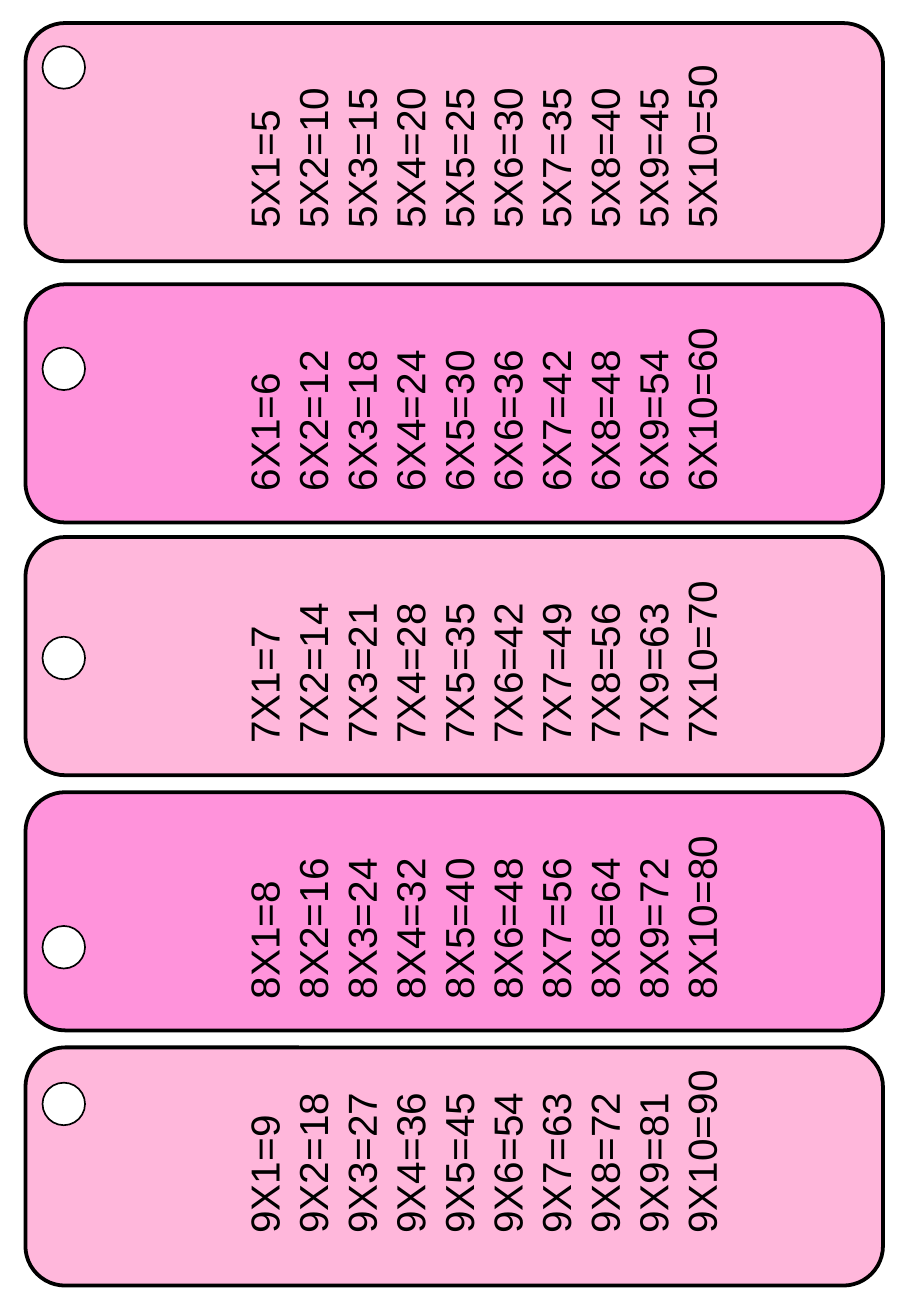
from lxml import etree
from pptx import Presentation
from pptx import util as u
from pptx.dml.color import RGBColor
from pptx.enum import shapes, text
from pptx.oxml.ns import qn

PX = u.Inches(1) // 100
BLACK = RGBColor(0x00, 0x00, 0x00)
WHITE = RGBColor(0xFF, 0xFF, 0xFF)
LIGHT_PINK = RGBColor(0xFF, 0x99, 0xCC)
DEEP_PINK = RGBColor(0xFF, 0x66, 0xCC)

CARD_LEFT, CARD_WIDTH, CARD_HEIGHT = 21, 706, 196
HOLE_LEFT, HOLE_SIZE = 35, 35
TABLE_LEFT, TABLE_WIDTH, TABLE_HEIGHT = 317, 164, 414

# multiplier, card top, hole top, top of the times table before its turn
CARDS = [
    (5, 19, 38, -91),
    (6, 234, 286, 125),
    (7, 442, 524, 333),
    (8, 652, 762, 543),
    (9, 862, 891, 736),
]

FRAME_FORMAT = {
    "word_wrap": True,
    "auto_size": text.MSO_AUTO_SIZE.SHAPE_TO_FIT_TEXT,
}
LINE_FORMAT = {
    "alignment": text.PP_ALIGN.JUSTIFY,
    "line_spacing": u.Pt(28.8),
}
FONT_FORMAT = {"name": "Arial", "size": u.Pt(24)}


def apply(target, values):
    for name, value in values.items():
        setattr(target, name, value)


def px(*lengths):
    return [length * PX for length in lengths]


def add_outlined(slide, preset, box, color, line_width):
    shape = slide.shapes.add_shape(preset, *px(*box))
    shape.shadow.inherit = False
    shape.fill.solid()
    shape.fill.fore_color.rgb = color
    shape.line.color.rgb = BLACK
    shape.line.width = u.Pt(line_width)
    return shape


def set_opacity(shape, percent):
    color = shape.fill._xPr.find(qn("a:solidFill"))[0]
    etree.SubElement(color, qn("a:alpha"), val=str(percent * 1000))


def add_card(slide, top, color):
    box = (CARD_LEFT, top, CARD_WIDTH, CARD_HEIGHT)
    card = add_outlined(slide, shapes.MSO_SHAPE.ROUNDED_RECTANGLE, box, color, 2.25)
    set_opacity(card, 70)


def add_hole(slide, top):
    box = (HOLE_LEFT, top, HOLE_SIZE, HOLE_SIZE)
    add_outlined(slide, shapes.MSO_SHAPE.OVAL, box, WHITE, 1)


def add_times_table(slide, multiplier, top):
    times_table = slide.shapes.add_textbox(
        *px(TABLE_LEFT, top, TABLE_WIDTH, TABLE_HEIGHT))
    times_table.rotation = 270
    frame = times_table.text_frame
    apply(frame, FRAME_FORMAT)
    frame.text = "\n".join(f"{multiplier}X{n}={multiplier * n}" for n in range(1, 11))
    for product in frame.paragraphs:
        apply(product, LINE_FORMAT)
        font = product.runs[0].font
        apply(font, FONT_FORMAT)
        font.color.rgb = BLACK


def main():
    deck = Presentation()
    deck.slide_width, deck.slide_height = px(750, 1083)
    slide = deck.slides.add_slide(deck.slide_layouts.get_by_name("Blank"))

    for index, (multiplier, card_top, hole_top, table_top) in enumerate(CARDS):
        add_card(slide, card_top, DEEP_PINK if index % 2 else LIGHT_PINK)
        add_hole(slide, hole_top)
        add_times_table(slide, multiplier, table_top)

    deck.save("out.pptx")


if __name__ == "__main__":
    main()
